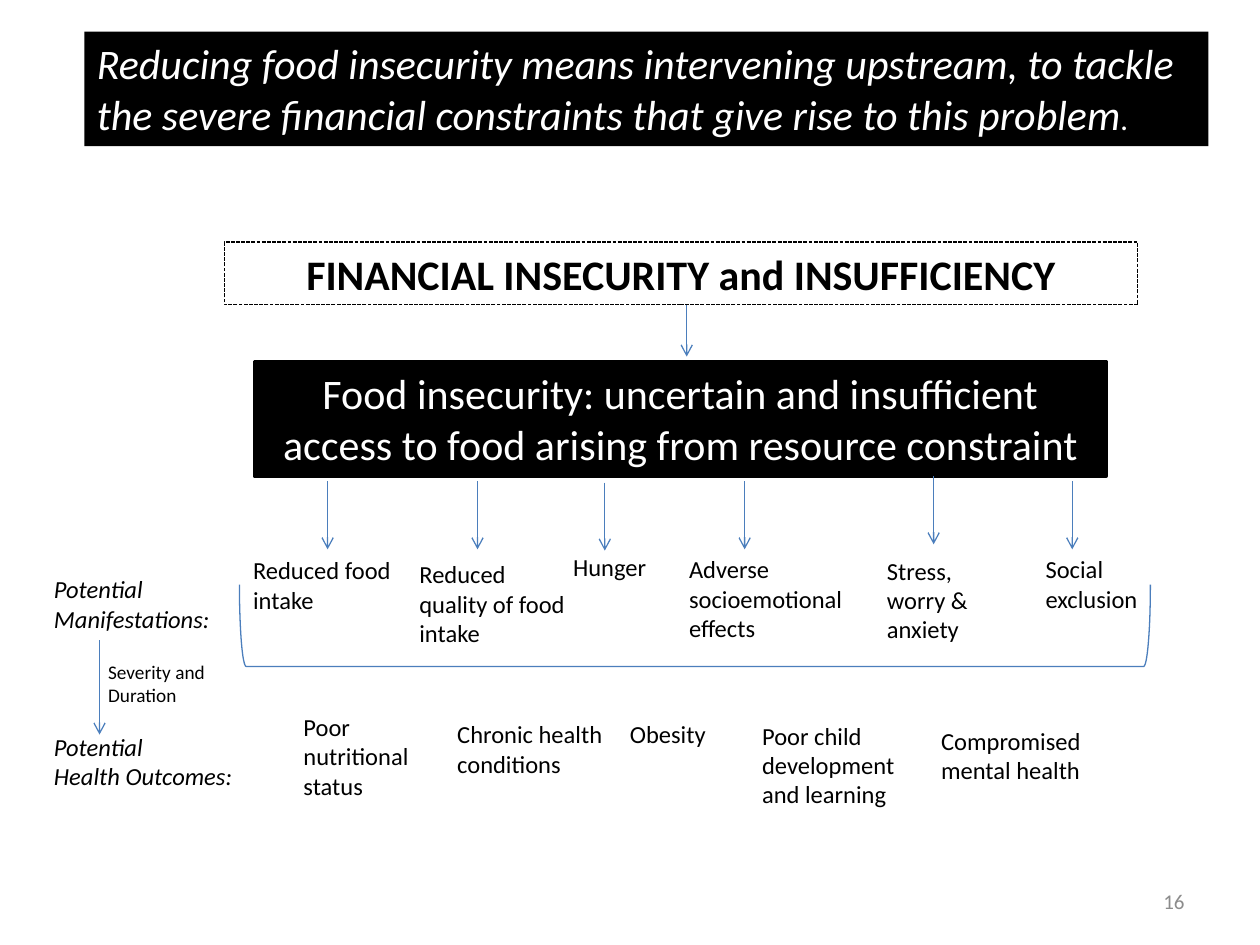
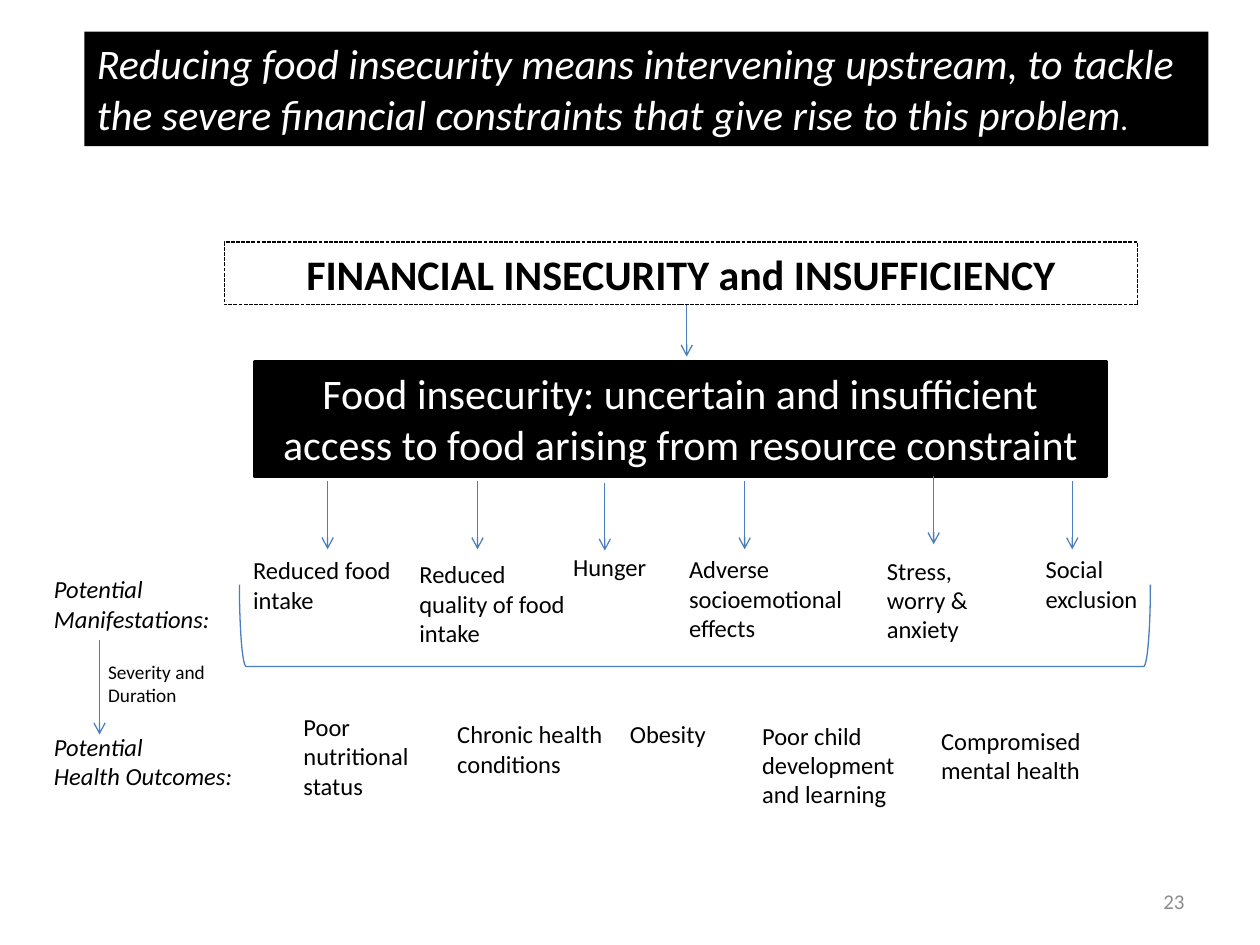
"""Build two slides that trace food insecurity back to financial constraints."""
from dataclasses import dataclass

from lxml import etree
from pptx import Presentation
from pptx.dml.color import RGBColor
from pptx.enum.dml import MSO_LINE
from pptx.enum.shapes import MSO_CONNECTOR, MSO_SHAPE
from pptx.enum.text import MSO_ANCHOR, MSO_AUTO_SIZE, PP_ALIGN
from pptx.oxml.ns import qn
from pptx.shapes.autoshape import Shape
from pptx.shapes.shapetree import GroupShapes, SlideShapes
from pptx.slide import Slide
from pptx.util import Pt

EMU_PER_PX = 9144
SLIDE_WIDTH, SLIDE_HEIGHT = 1000, 750
BLANK_LAYOUT = 6
FONT = "Calibri"

BLACK = RGBColor(0x00, 0x00, 0x00)
WHITE = RGBColor(0xFF, 0xFF, 0xFF)
BLUE = RGBColor(0x4B, 0x7E, 0xBC)
GREY = RGBColor(0x8C, 0x8C, 0x8C)

LEFT, CENTER, RIGHT = PP_ALIGN.LEFT, PP_ALIGN.CENTER, PP_ALIGN.RIGHT
TOP, MIDDLE = MSO_ANCHOR.TOP, MSO_ANCHOR.MIDDLE
GROW = MSO_AUTO_SIZE.SHAPE_TO_FIT_TEXT
RECTANGLE, BRACKET = MSO_SHAPE.RECTANGLE, MSO_SHAPE.RIGHT_BRACKET
STRAIGHT = MSO_CONNECTOR.STRAIGHT
SHORT_DASH = MSO_LINE.SQUARE_DOT

HEADING_SIZE, LABEL_SIZE, NOTE_SIZE, NUMBER_SIZE, STOP_SIZE = 24, 14, 11, 12, 18
THIN, THICK = 0.75, 2
ONE_LINE, TWO_LINES, THREE_LINES = 34, 57, 81
LABEL_WIDTH = 142
ARROW_TOP, ARROW_LENGTH = 382, 54

ShapeTree = SlideShapes | GroupShapes


@dataclass(frozen=True)
class Box:
    """Position and size in px."""

    left: int
    top: int
    width: int
    height: int

    def emu(self) -> list[int]:
        """Return left, top, width and height in EMU."""
        return [value * EMU_PER_PX for value in (self.left, self.top, self.width, self.height)]


@dataclass(frozen=True)
class Run:
    """A piece of text in one style."""

    text: str
    size: int = LABEL_SIZE
    color: RGBColor = BLACK
    bold: bool = False
    italic: bool = False


@dataclass(frozen=True)
class Label:
    """Paragraphs of runs in a text box."""

    box: Box
    paragraphs: list[list[Run]]


@dataclass(frozen=True)
class Arrow:
    """A vertical arrow pointing down."""

    x: int
    top: int = ARROW_TOP
    length: int = ARROW_LENGTH


@dataclass(frozen=True)
class Panel:
    """A rectangle with an optional fill and outline."""

    box: Box
    runs: list[Run]
    fill: RGBColor | None = None
    line_width: float = 0
    dashed: bool = False
    alignment: PP_ALIGN = CENTER


def plain_label(text: str, left: int, top: int, height: int, width: int = LABEL_WIDTH) -> Label:
    """Describe a label of one plain paragraph."""
    return Label(Box(left, top, width, height), [[Run(text)]])


def row_heading(lines: list[str], top: int, width: int) -> Label:
    """Describe the italic heading of a diagram row."""
    return Label(Box(33, top, width, TWO_LINES), [[Run(line, italic=True)] for line in lines])


TITLE = Panel(
    Box(67, 25, 892, 91),
    [
        Run(
            "Reducing food insecurity means intervening upstream, to tackle "
            "the severe financial constraints that give rise to this problem",
            HEADING_SIZE, WHITE, italic=True,
        ),
        Run(".", STOP_SIZE, WHITE, italic=True),
    ],
    fill=BLACK,
    alignment=LEFT,
)
CAUSES = [
    Panel(
        Box(202, 287, 676, 91),
        [Run("Food insecurity: uncertain and insufficient access to food "
             "arising from resource constraint", HEADING_SIZE, WHITE)],
        fill=BLACK,
        line_width=THICK,
    ),
    Panel(
        Box(178, 192, 725, 50),
        [Run("FINANCIAL INSECURITY and INSUFFICIENCY", HEADING_SIZE, bold=True)],
        line_width=THIN,
        dashed=True,
    ),
]
LABELS = [
    row_heading(["Potential", "Manifestations:"], 451, 228),
    plain_label("Reduced food intake", 191, 436, TWO_LINES),
    plain_label("Reduced quality of food intake", 323, 439, THREE_LINES),
    plain_label("Hunger", 445, 433, ONE_LINE, 96),
    plain_label("Adverse socioemotional effects", 537, 435, THREE_LINES),
    plain_label("Stress, worry & anxiety", 694, 436, THREE_LINES, 94),
    plain_label("Social exclusion", 820, 435, TWO_LINES, 117),
    Label(Box(76, 519, 103, 47), [[Run("Severity and Duration", NOTE_SIZE)]]),
    row_heading(["Potential", "Health Outcomes:"], 576, 189),
    plain_label("Poor nutritional status", 231, 560, THREE_LINES),
    plain_label("Chronic health conditions", 353, 566, TWO_LINES),
    plain_label("Obesity", 490, 566, ONE_LINE, 121),
    plain_label("Poor child development and learning", 595, 567, THREE_LINES),
    plain_label("Compromised mental health", 737, 571, TWO_LINES),
]
ARROWS = [
    Arrow(545, 242, 41),
    Arrow(260),
    Arrow(379),
    Arrow(480, 383),
    Arrow(591),
    Arrow(741, 378),
    Arrow(851),
    Arrow(79, 508, 75),
]
MANIFESTATIONS_BRACKET = Box(519, 135, 65, 723)
NUMBER_BOX = Box(717, 695, 233, 40)
SLIDE_NUMBERS = [16, 23]


def write_text(
    shape: Shape,
    paragraphs: list[list[Run]],
    alignment: PP_ALIGN = LEFT,
    anchor: MSO_ANCHOR = TOP,
) -> None:
    """Fill a shape with paragraphs, run by run."""
    frame = shape.text_frame
    frame.word_wrap = True
    frame.vertical_anchor = anchor
    for index, runs in enumerate(paragraphs):
        paragraph = frame.add_paragraph() if index else frame.paragraphs[0]
        paragraph.alignment = alignment
        for item in runs:
            run = paragraph.add_run()
            run.text = item.text
            run.font.name = FONT
            run.font.size = Pt(item.size)
            run.font.color.rgb = item.color
            run.font.bold = item.bold
            run.font.italic = item.italic


def draw_label(shapes: ShapeTree, label: Label) -> None:
    """Draw a text box that grows with its text."""
    shape = shapes.add_textbox(*label.box.emu())
    write_text(shape, label.paragraphs)
    shape.text_frame.auto_size = GROW


def draw_panel(shapes: ShapeTree, panel: Panel) -> None:
    """Draw a rectangle with text."""
    shape = shapes.add_shape(RECTANGLE, *panel.box.emu())
    shape.shadow.inherit = False
    if panel.fill is None:
        shape.fill.background()
    else:
        shape.fill.solid()
        shape.fill.fore_color.rgb = panel.fill
    if panel.line_width:
        shape.line.color.rgb = BLACK
        shape.line.width = Pt(panel.line_width)
    else:
        shape.line.fill.background()
    if panel.dashed:
        shape.line.dash_style = SHORT_DASH
    write_text(shape, [panel.runs], panel.alignment)
    shape.text_frame.auto_size = GROW


def draw_arrow(shapes: ShapeTree, arrow: Arrow) -> None:
    """Draw a blue line with an open head at its lower end."""
    x, top, bottom = (
        value * EMU_PER_PX for value in (arrow.x, arrow.top, arrow.top + arrow.length)
    )
    connector = shapes.add_connector(STRAIGHT, x, top, x, bottom)
    connector.line.color.rgb = BLUE
    connector.line.width = Pt(THIN)
    properties = connector.element.spPr
    etree.SubElement(properties.find(qn("a:ln")), qn("a:tailEnd"), type="arrow")
    etree.SubElement(properties, qn("a:effectLst"))


def draw_bracket(shapes: ShapeTree, box: Box) -> None:
    """Draw a bracket turned to open upwards."""
    shape = shapes.add_shape(BRACKET, *box.emu())
    shape.rotation = 90
    shape.shadow.inherit = False
    shape.fill.background()
    shape.line.color.rgb = BLUE
    shape.line.width = Pt(THIN)


def draw_slide(slide: Slide, number: int) -> None:
    """Draw the slide number, the diagram and the title."""
    number_shape = slide.shapes.add_textbox(*NUMBER_BOX.emu())
    write_text(number_shape, [[Run(str(number), NUMBER_SIZE, GREY)]], RIGHT, MIDDLE)
    diagram = slide.shapes.add_group_shape().shapes
    for panel in CAUSES:
        draw_panel(diagram, panel)
    for label in LABELS:
        draw_label(diagram, label)
    draw_bracket(diagram, MANIFESTATIONS_BRACKET)
    for arrow in ARROWS:
        draw_arrow(diagram, arrow)
    draw_panel(slide.shapes, TITLE)


def main() -> None:
    """Build and save the presentation."""
    presentation = Presentation()
    presentation.slide_width = SLIDE_WIDTH * EMU_PER_PX
    presentation.slide_height = SLIDE_HEIGHT * EMU_PER_PX
    for number in SLIDE_NUMBERS:
        slide = presentation.slides.add_slide(presentation.slide_layouts[BLANK_LAYOUT])
        draw_slide(slide, number)
    presentation.save("out.pptx")


if __name__ == "__main__":
    main()
